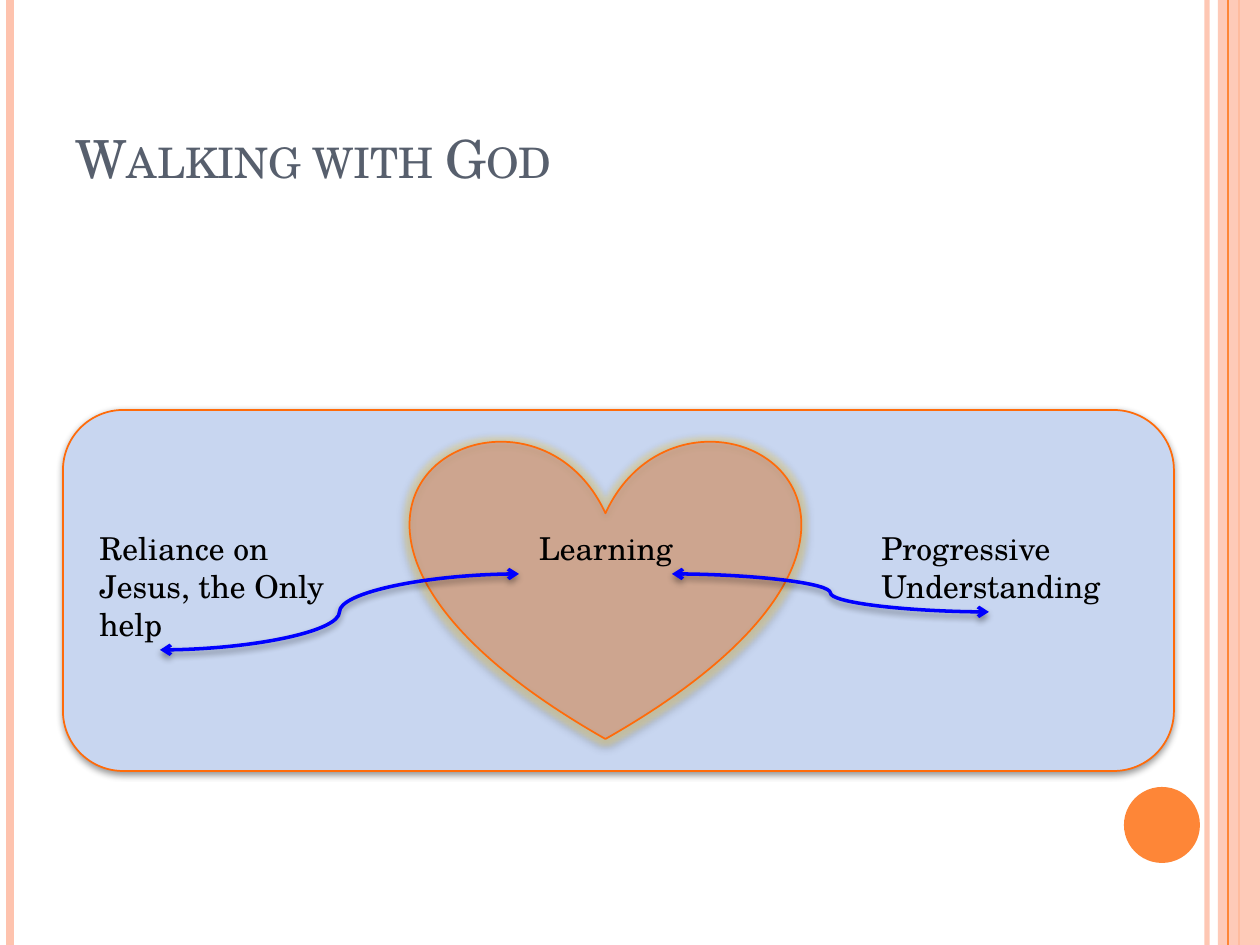
"""Builds the "Walking with God" slide with python-pptx."""
from lxml import etree
from pptx import Presentation, util as u
from pptx.dml.color import RGBColor
from pptx.enum import shapes, text
from pptx.oxml.ns import qn

SCALE = 914400 / 126
WIDTH, HEIGHT = 1260, 945
ORANGE, PEACH, EDGE, BLUE = "FE8637", "FEC3AE", "FF6B0A", "0000FF"


def px(length):
    return u.Emu(round(length * SCALE))


def color(value):
    return RGBColor.from_string(value)


def add_node(parent, tag, **attributes):
    return etree.SubElement(parent, qn(tag), {k: str(v) for k, v in attributes.items()})


def set_alpha(fill, percent):
    if percent < 100:
        choice = fill._xPr.find(qn("a:solidFill"))
        add_node(choice[0], "a:alpha", val=percent * 1000)


def add_effects(shape, shadow=0, distance=0, glow=None):
    properties = shape._element.spPr
    for old in properties.findall(qn("a:effectLst")):
        properties.remove(old)
    effects = add_node(properties, "a:effectLst")
    if glow:
        halo = add_node(effects, "a:glow", rad=u.Pt(5))
        tint = add_node(halo, "a:srgbClr", val=glow)
        add_node(tint, "a:alpha", val=40000)
    if shadow:
        outer = add_node(effects, "a:outerShdw", blurRad=u.Pt(4),
                         dist=u.Pt(distance), dir=5400000, rotWithShape=0)
        tint = add_node(outer, "a:srgbClr", val="000000")
        add_node(tint, "a:alpha", val=shadow * 1000)


def write(frame, words, size=18, ink="000000", align=None, small_caps=False):
    para = frame.paragraphs[0]
    para.alignment = align
    span = para.add_run()
    span.text = words
    span.font.name = "TeX Gyre Schola"
    span.font.size = u.Pt(size)
    span.font.color.rgb = color(ink)
    if small_caps:
        span.font._element.set("cap", "small")


class Painter:
    """Holds the style and the current slide, and draws each kind of element."""

    def __init__(self, page):
        self.page = page

    def shape(self, kind, left, top, width, height, fill, alpha=100, edge=None,
              shadow=0, glow=None):
        item = self.page.shapes.add_shape(kind, px(left), px(top), px(width), px(height))
        item.shadow.inherit = False
        item.fill.solid()
        item.fill.fore_color.rgb = color(fill)
        set_alpha(item.fill, alpha)
        if edge:
            item.line.color.rgb = color(edge)
            item.line.width = u.Pt(1)
        else:
            item.line.fill.background()
        add_effects(item, shadow, 1.6, glow)

    def line(self, start, end, stroke, width, alpha=100,
             kind=shapes.MSO_CONNECTOR.STRAIGHT, arrows=False, shadow=0):
        item = self.page.shapes.add_connector(kind, *map(px, (*start, *end)))
        item.line.color.rgb = color(stroke)
        item.line.width = u.Pt(width)
        set_alpha(item.line.fill, alpha)
        if arrows:
            for tag in ("a:headEnd", "a:tailEnd"):
                add_node(item.line._get_or_add_ln(), tag, type="arrow")
        add_effects(item, shadow, 2)

    def rail(self, x, stroke, width, alpha=100):
        self.line((x, 0), (x, HEIGHT), stroke, width, alpha)

    def text(self, words, left, top, width, height,
             anchor=text.MSO_ANCHOR.TOP, **style):
        box = self.page.shapes.add_textbox(px(left), px(top), px(width), px(height))
        box.text_frame.word_wrap = True
        box.text_frame.vertical_anchor = anchor
        write(box.text_frame, words, **style)


def main():
    deck = Presentation()
    deck.slide_width, deck.slide_height = px(WIDTH), px(HEIGHT)
    painter = Painter(deck.slides.add_slide(deck.slide_layouts[6]))
    kinds = shapes.MSO_SHAPE

    painter.rail(1207, PEACH, 3, alpha=93)
    painter.rail(10, PEACH, 4.5)
    painter.rail(1239, ORANGE, 1.5)
    painter.shape(kinds.RECTANGLE, 1218, 0, 42, HEIGHT, PEACH, alpha=87)
    painter.rail(1228, ORANGE, 0.75)
    painter.shape(kinds.OVAL, 1124, 787, 76, 76, ORANGE)

    painter.text("Walking with God", 63, 38, 1029, 157, size=30, ink="575F6D",
                 anchor=text.MSO_ANCHOR.BOTTOM, small_caps=True)

    painter.shape(kinds.ROUNDED_RECTANGLE, 63, 410, 1111, 361, "C8D6F0",
                  edge=EDGE, shadow=42)
    painter.shape(kinds.HEART, 411, 438, 389, 301, "FF0000", alpha=14,
                  edge=EDGE, shadow=42, glow="FFE584")

    label_top = 523
    painter.text("Learning", 485, label_top, 242, 50, align=text.PP_ALIGN.CENTER)
    painter.text("Reliance on Jesus, the Only help", 87, label_top, 262, 127)
    painter.text("Progressive Understanding", 869, label_top, 266, 90)

    for start, end in (((160, 650), (519, 574)), ((989, 612), (672, 574))):
        painter.line(start, end, BLUE, 2, kind=shapes.MSO_CONNECTOR.CURVE,
                     arrows=True, shadow=40)

    deck.save("out.pptx")


if __name__ == "__main__":
    main()
